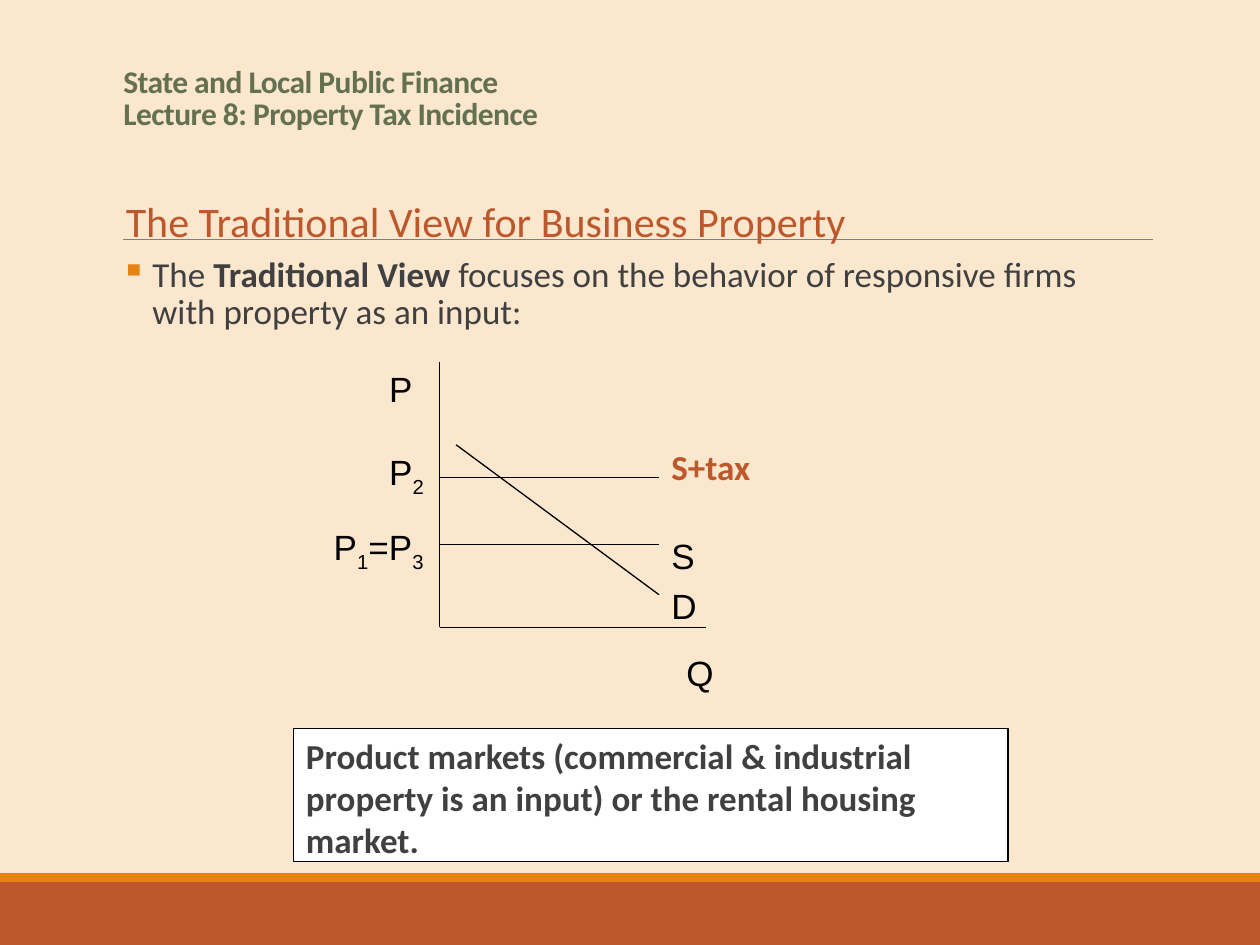
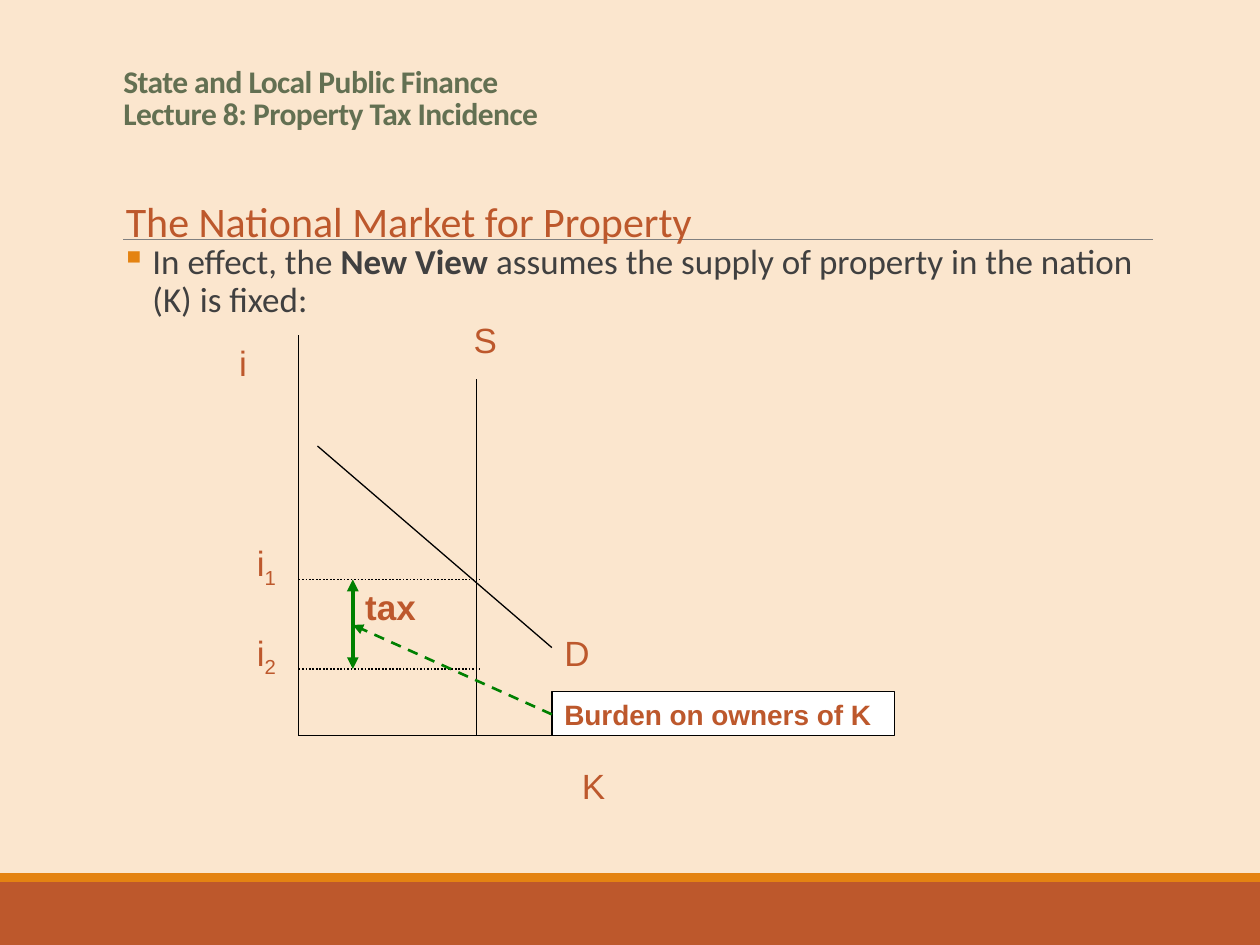
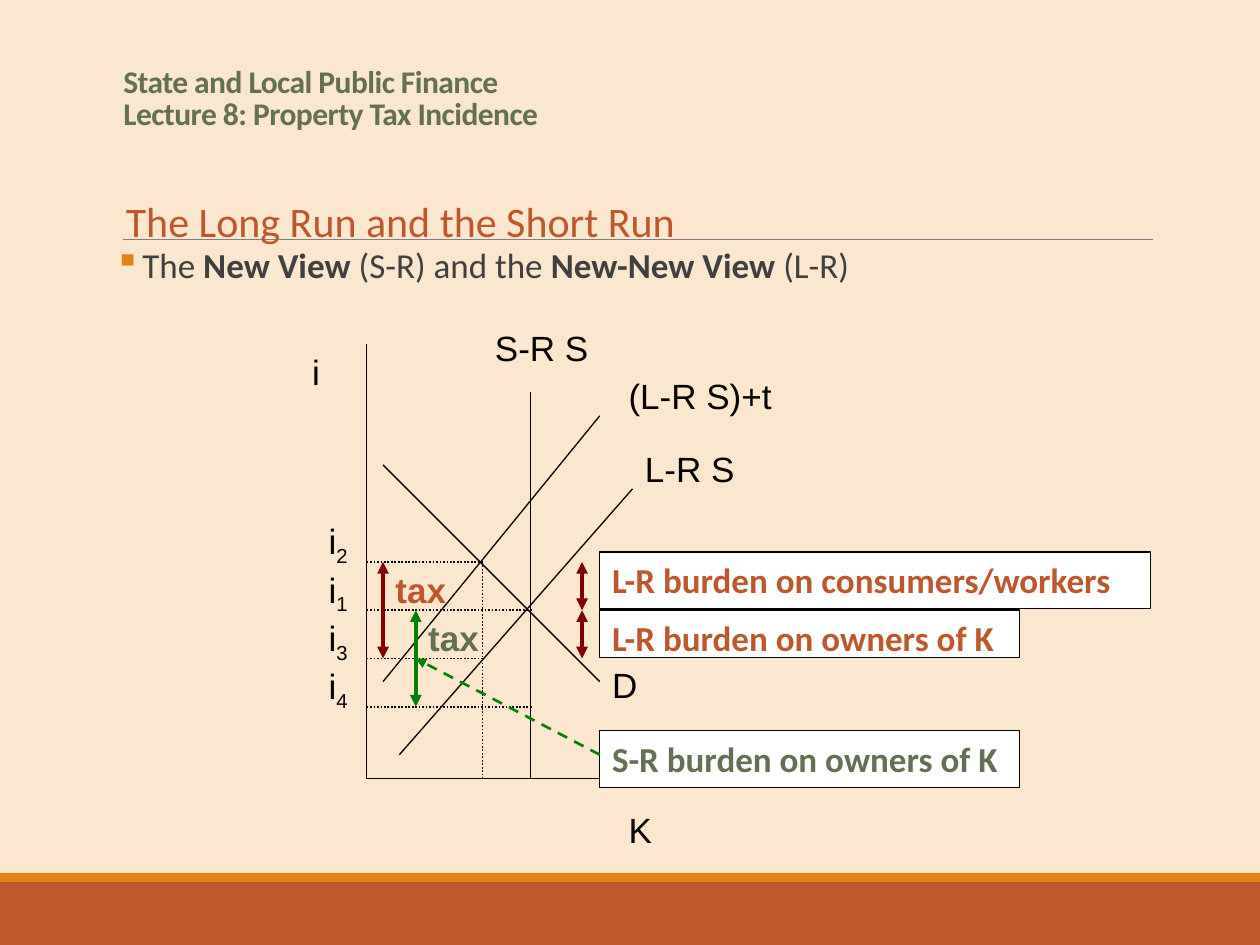
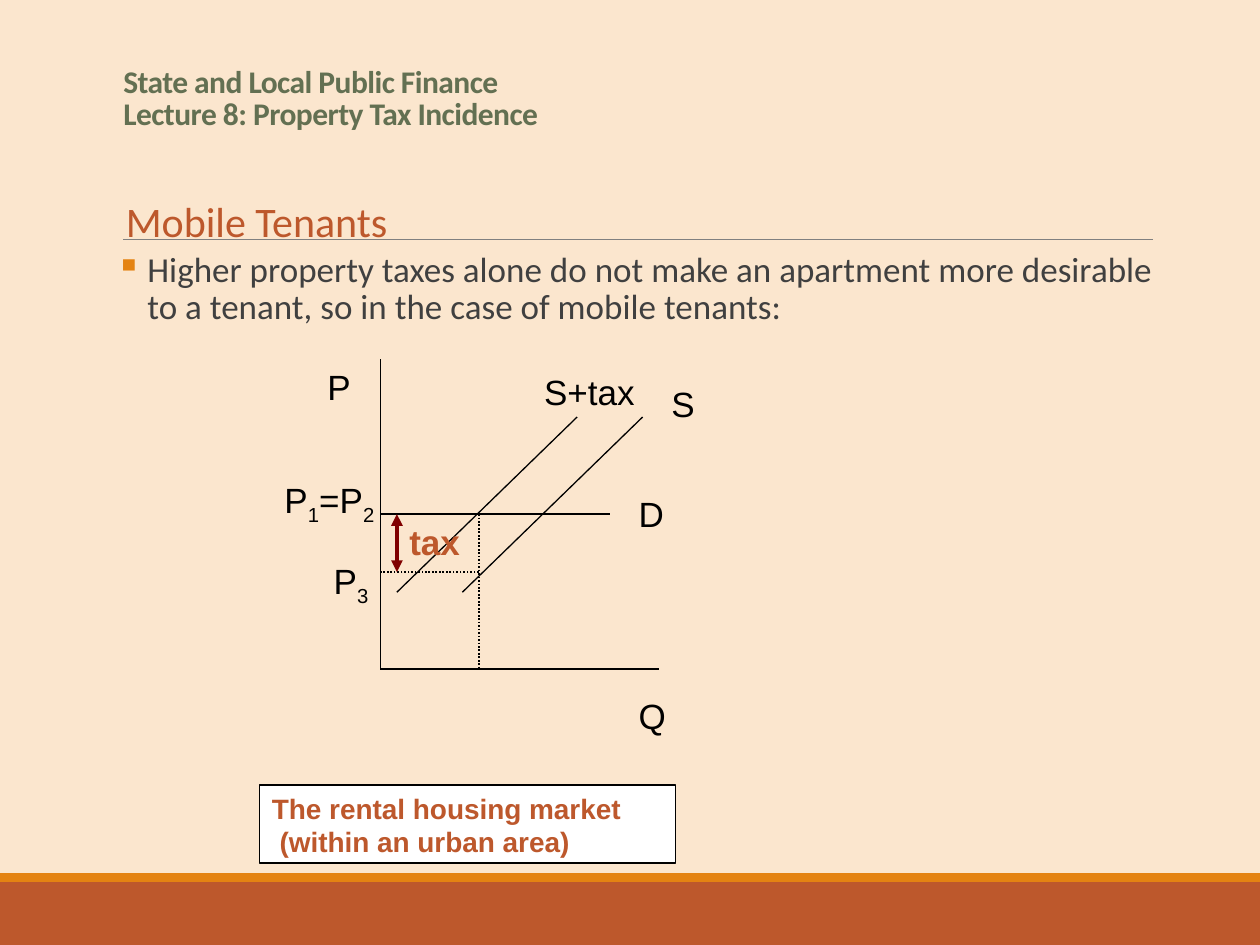
import dataclasses

import pptx
import pptx.dml.color
import pptx.enum.dml
import pptx.enum.shapes
import pptx.enum.text
import pptx.oxml
import pptx.oxml.ns
import pptx.oxml.xmlchemy
import pptx.util
from lxml import etree

WIDTH, HEIGHT = pptx.util.Inches(10), pptx.util.Inches(7.5)
COLUMNS, ROWS = 100, 75
DASH = pptx.enum.dml.MSO_LINE


@dataclasses.dataclass(frozen=True)
class Theme:
    """Colours, fonts and type sizes of the lecture."""

    paper: str = "FBE6CE"
    rust: str = "BD582C"
    orange: str = "E48312"
    olive: str = "637052"
    ink: str = "404040"
    black: str = "000000"
    white: str = "FFFFFF"
    grey: str = "808080"
    green: str = "008000"
    maroon: str = "800000"
    prose: str = "Calibri"
    graph: str = "Arial"
    title_size: int = 18
    heading_size: int = 24
    text_size: int = 20
    small_size: int = 16


T = Theme()


@dataclasses.dataclass(frozen=True)
class Stroke:
    """Look of a line: colour, width in points, dash and arrowheads."""

    color: str = T.black
    width: float = 0.75
    dash: object = None
    heads: tuple = ()


RULE = Stroke(T.grey, 0.5)
CURVE = Stroke()
GUIDE = Stroke(width=1, dash=DASH.ROUND_DOT)
TAX = Stroke(T.maroon, 2.25, heads=("headEnd", "tailEnd"))
SHORT_RUN_TAX = dataclasses.replace(TAX, color=T.green)
POINTER = Stroke(T.green, 1.5, DASH.DASH, ("tailEnd",))


def rgb(color):
    """Turn a hex string into a colour."""
    return pptx.dml.color.RGBColor.from_string(color)


def place(*lengths):
    """Turn alternating columns and rows into slide lengths."""
    cells = (WIDTH / COLUMNS, HEIGHT / ROWS)
    return [pptx.util.Emu(round(n * cells[i % 2])) for i, n in enumerate(lengths)]


def add_xml(parent, tag, **attributes):
    """Append a DrawingML element."""
    return etree.SubElement(parent, pptx.oxml.ns.qn(tag), **attributes)


def add_line(shapes, start, end, stroke=CURVE):
    """Draw a straight line between two grid points."""
    kind = pptx.enum.shapes.MSO_CONNECTOR.STRAIGHT
    sp = shapes.add_connector(kind, *place(*start, *end))
    sp.line.color.rgb = rgb(stroke.color)
    sp.line.width = pptx.util.Pt(stroke.width)
    if stroke.dash:
        sp.line.dash_style = stroke.dash
    properties = sp._element.spPr
    for head in stroke.heads:
        add_xml(properties.find(pptx.oxml.ns.qn("a:ln")), f"a:{head}", type="triangle")
    add_xml(properties, "a:effectLst")


def add_lines(shapes, stroke, *ends):
    """Draw several lines with one stroke."""
    for start, end in ends:
        add_line(shapes, start, end, stroke)


def add_rect(shapes, at, fill, outline=None):
    """Draw a filled rectangle."""
    sp = shapes.add_shape(pptx.enum.shapes.MSO_SHAPE.RECTANGLE, *place(*at))
    sp.shadow.inherit = False
    sp.fill.solid()
    sp.fill.fore_color.rgb = rgb(fill)
    if outline:
        sp.line.color.rgb = rgb(outline)
        sp.line.width = pptx.util.Pt(0.75)
    else:
        sp.line.fill.background()
    return sp


def write(sp, text, color, size=T.text_size, font=T.graph, bold=None):
    """Fill a shape with text where *stars* mark bold and ~tildes~ subscripts."""
    tf = sp.text_frame
    tf.word_wrap = True
    tf.vertical_anchor = pptx.enum.text.MSO_ANCHOR.TOP
    p = tf.paragraphs[0]
    p.alignment = pptx.enum.text.PP_ALIGN.LEFT
    p.font.name, p.font.size, p.font.bold = font, pptx.util.Pt(size), bold
    p.font.color.rgb = rgb(color)
    for n, row in enumerate(text.split("\n")):
        if n:
            p.add_line_break()
        for i, part in enumerate(row.split("*")):
            for j, piece in enumerate(part.split("~")):
                if piece:
                    r = p.add_run()
                    r.text = piece
                    if i % 2:
                        r.font.bold = True
                    if j % 2:
                        r._r.get_or_add_rPr().set("baseline", "-25000")
    return p


def add_label(shapes, at, text, color=T.black, **style):
    """Put a transparent label on the grid."""
    sp = shapes.add_textbox(*place(*at))
    write(sp, text, color, **style)
    return sp


def add_note(shapes, at, text, color=T.rust, **style):
    """Put bold text in a white outlined box."""
    write(add_rect(shapes, at, T.white, T.black), text, color, bold=True, **style)


def add_title(s):
    """Write the lecture title."""
    sp = s.shapes.add_textbox(*place(8.8, 3.3, 82.5, 7.7))
    p = write(sp, "State and Local Public Finance\nLecture 8: Property Tax Incidence",
              T.olive, T.title_size, T.prose, True)
    sp.text_frame.vertical_anchor = pptx.enum.text.MSO_ANCHOR.BOTTOM
    p.line_spacing = 0.85
    for r in p.runs:
        r._r.get_or_add_rPr().set("spc", "-30")


def add_heading(s, text, width):
    """Write the slide heading on one line."""
    sp = add_label(s.shapes, (9, 15, width, 5), text, T.rust,
                   size=T.heading_size, font=T.prose)
    sp.text_frame.word_wrap = False
    sp.text_frame.auto_size = pptx.enum.text.MSO_AUTO_SIZE.SHAPE_TO_FIT_TEXT


def add_bullet(s, at, text, indent=0.25, spacing=0.9):
    """Write the bulleted statement above the diagram."""
    sp = s.shapes.add_textbox(*place(*at))
    p = write(sp, text, T.ink, font=T.prose)
    sp.text_frame.margin_left = sp.text_frame.margin_right = 0
    p.line_spacing = spacing
    p.space_before, p.space_after = pptx.util.Pt(6.8), pptx.util.Pt(1.1)
    properties = p._p.get_or_add_pPr()
    hang = pptx.util.Inches(indent)
    properties.set("marL", str(hang))
    properties.set("indent", str(-hang))
    color = etree.Element(pptx.oxml.ns.qn("a:buClr"))
    add_xml(color, "a:srgbClr", val=T.orange)
    mark = etree.Element(pptx.oxml.ns.qn("a:buChar"), char="▪")
    defaults = properties.find(pptx.oxml.ns.qn("a:defRPr"))
    defaults.addprevious(color)
    defaults.addprevious(mark)


def add_slide(prs, heading, width):
    """Start a slide with its bands, rule, title and heading."""
    s = prs.slides.add_slide(prs.slide_layouts[6])
    s.background.fill.solid()
    s.background.fill.fore_color.rgb = rgb(T.paper)
    add_rect(s.shapes, (0, 70, COLUMNS, 5), T.rust)
    add_rect(s.shapes, (0, 69.3, COLUMNS, 0.7), T.orange)
    add_line(s.shapes, (9.8, 19), (91.5, 19), RULE)
    add_title(s)
    add_heading(s, heading, width)
    return s


def add_axes(s, top, origin, right):
    """Start a diagram group with a vertical and a horizontal axis."""
    shapes = s.shapes.add_group_shape().shapes
    x, y = origin
    add_lines(shapes, CURVE, ((x, top), origin), (origin, (right, y)))
    return shapes


def build_traditional_view(prs):
    """Business property: flat supply shifted up by the tax."""
    s = add_slide(prs, "The Traditional View for Business Property", 61.3)
    add_bullet(s, (9.6, 19.9, 80.8, 6.4), "The *Traditional View* focuses on the "
               "behavior of responsive firms with property as an input:")
    axis, end = 34.9, 52.3
    g = add_axes(s, 28.7, (axis, 49.8), 56)
    for price in (43.2, 37.9):
        add_line(g, (axis, price), (end, price))
    add_line(g, (36.2, 35.3), (end, 47.2))
    add_label(g, (29.9, 28.7, 3.7, 5.3), "P")
    add_label(g, (53.5, 51.2, 3.7, 5.3), "Q")
    add_label(g, (end, 41.9, 6.2, 4), "S")
    add_label(g, (end, 34.9, 10.2, 4.3), "S+tax", T.rust, font=T.prose, bold=True)
    add_label(g, (end, 45.9, 6.2, 4), "D")
    add_label(g, (25.5, 41.2, 9.9, 4), "P~1~=P~3~")
    add_label(g, (29.9, 35.3, 9.9, 4), "P~2~")
    add_note(g, (23.3, 57.8, 56.7, 10.6), "Product markets (commercial & industrial "
             "property is an input) or the rental housing market.", T.ink, font=T.prose)


def build_national_market(prs):
    """National market: fixed supply, so owners bear the tax."""
    s = add_slide(prs, "The National Market for Property", 48.6)
    add_bullet(s, (9.6, 18.9, 82.1, 5.6), "In effect, the *New View* assumes the "
               "supply of property in the nation (K) is fixed:")
    axis, base, supply, edge, tax = 23.7, 58.4, 37.8, 43.8, 28
    before, after = 46, 53.1
    g = add_axes(s, 26.6, (axis, base), 48.1)
    add_lines(g, CURVE, ((25.2, 35.4), (edge, 51.4)), ((supply, base), (supply, 30.1)))
    for name, rate in (("i~1~", before), ("i~2~", after)):
        add_line(g, (axis, rate), (38.1, rate), GUIDE)
        add_label(g, (19.4, rate - 3.5, 5.7, 5.3), name, T.rust)
    add_line(g, (tax, before), (tax, after), SHORT_RUN_TAX)
    add_label(g, (18, 26.6, 4.3, 7.1), "i", T.rust)
    add_label(g, (45.2, 60.2, 4.3, 7.1), "K", T.rust)
    add_label(g, (edge, 49.6, 7.2, 5.3), "D", T.rust)
    add_label(g, (36.6, 24.8, 11.5, 5.3), "S", T.rust)
    add_note(g, (edge, 54.9, 27.2, 3.5), "Burden on owners of K", size=T.small_size)
    add_line(g, (edge, 56.7), (tax, 49.6), POINTER)
    add_label(g, (tax, before, 6.9, 7.1), "tax", T.rust, bold=True)


def build_long_and_short_run(prs):
    """Long run and short run: who bears the tax on property."""
    s = add_slide(prs, "The Long Run and the Short Run", 46)
    add_bullet(s, (9.1, 19.5, 67.6, 3.8), "The *New View* (S-R) and the "
               "*New-New View* (L-R)", 0.22, 0.8)
    axis, base, supply, edge = 29.1, 61.8, 42.1, 47.6
    taxed, untaxed = 38.3, 42.3
    long_tax, short_tax, shares = 30.4, 33, 46.2
    step = 3.83
    rates = [44.6 + step * n for n in range(4)]
    g = add_axes(s, 27.3, (axis, base), 51.5)
    add_lines(g, CURVE, ((30.4, 36.9), (edge, 54.1)), ((30.4, 54.1), (edge, 33)),
              ((31.7, 59.9), (50.2, 38.8)), ((supply, base), (supply, 31.1)))
    for digit, rate, end in zip("2134", rates, (taxed, untaxed, taxed, untaxed)):
        add_line(g, (axis, rate), (end, rate), GUIDE)
        add_label(g, (25.1, rate - step, 5.3, 5.8), f"i~{digit}~")
    add_line(g, (taxed, rates[0]), (taxed, base), GUIDE)
    add_lines(g, TAX, ((long_tax, rates[0]), (long_tax, rates[2])),
              ((shares, rates[0]), (shares, rates[1])),
              ((shares, rates[1]), (shares, rates[2])))
    add_line(g, (short_tax, rates[1]), (short_tax, rates[3]), SHORT_RUN_TAX)
    add_label(g, (23.8, 27.3, 4, 7.7), "i")
    add_label(g, (48.9, 63.7, 4, 7.7), "K")
    add_label(g, (50.2, 35, 10.6, 5.8), "L-R S")
    add_label(g, (48.9, 29.2, 17.2, 5.7), "(L-R S)+t")
    add_label(g, (edge, 52.2, 6.6, 5.8), "D")
    add_label(g, (38.3, 25.4, 10.6, 5.8), "S-R S")
    add_label(g, (long_tax, rates[0], 7.5, 7.6), "tax", T.rust, bold=True)
    add_label(g, (short_tax, rates[1], 7.5, 7.7), "tax", T.olive, bold=True)
    add_note(g, (edge, 43.8, 43.7, 4.5), "L-R burden on consumers/workers", font=T.prose)
    add_note(g, (edge, 48.4, 33.3, 3.8), "L-R burden on owners of K", font=T.prose)
    add_note(g, (edge, 58, 33.3, 4.5), "S-R burden on owners of K", T.olive, font=T.prose)
    add_line(g, (edge, 59.9), (short_tax, rates[2]), POINTER)


def build_mobile_tenants(prs):
    """Mobile tenants: flat demand, so landlords bear the tax."""
    s = add_slide(prs, "Mobile Tenants", 23)
    add_bullet(s, (9.2, 19.5, 82.5, 3.3), "Higher property taxes alone do not make an "
               "apartment more desirable to a tenant, so in the case of mobile tenants:")
    axis, base, taxed, tax = 30.2, 53.1, 38, 31.5
    paid, kept = 40.8, 45.4
    g = add_axes(s, 28.5, (axis, base), 52.3)
    add_line(g, (axis, paid), (48.4, paid))
    for left in (36.7, 31.5):
        add_line(g, (left, 47), (left + 14.3, 33.1))
    add_lines(g, GUIDE, ((taxed, kept), (axis, kept)), ((taxed, paid), (taxed, base)))
    add_line(g, (tax, paid), (tax, kept), TAX)
    add_label(g, (25, 28.5, 3.9, 6.1), "P")
    add_label(g, (49.7, 54.6, 3.9, 6.1), "Q")
    add_label(g, (52.3, 29.9, 6.5, 4.6), "S")
    add_label(g, (42.2, 28.9, 10.4, 4.7), "S+tax")
    add_label(g, (49.7, 38.6, 6.5, 4.6), "D")
    add_label(g, (25.5, 43.9, 5.2, 4.6), "P~3~")
    add_label(g, (21.6, 37.5, 13, 4.6), "P~1~=P~2~")
    add_label(g, (tax, paid, 6.5, 4.6), "tax", T.rust, bold=True)
    add_note(g, (20.6, 62.3, 33, 6.2), "The rental housing market\n (within an urban area)",
             size=T.small_size)


def main():
    """Build the four lecture slides."""
    prs = pptx.Presentation()
    prs.slide_width, prs.slide_height = WIDTH, HEIGHT
    build_traditional_view(prs)
    build_national_market(prs)
    build_long_and_short_run(prs)
    build_mobile_tenants(prs)
    prs.save("out.pptx")


if __name__ == "__main__":
    main()
